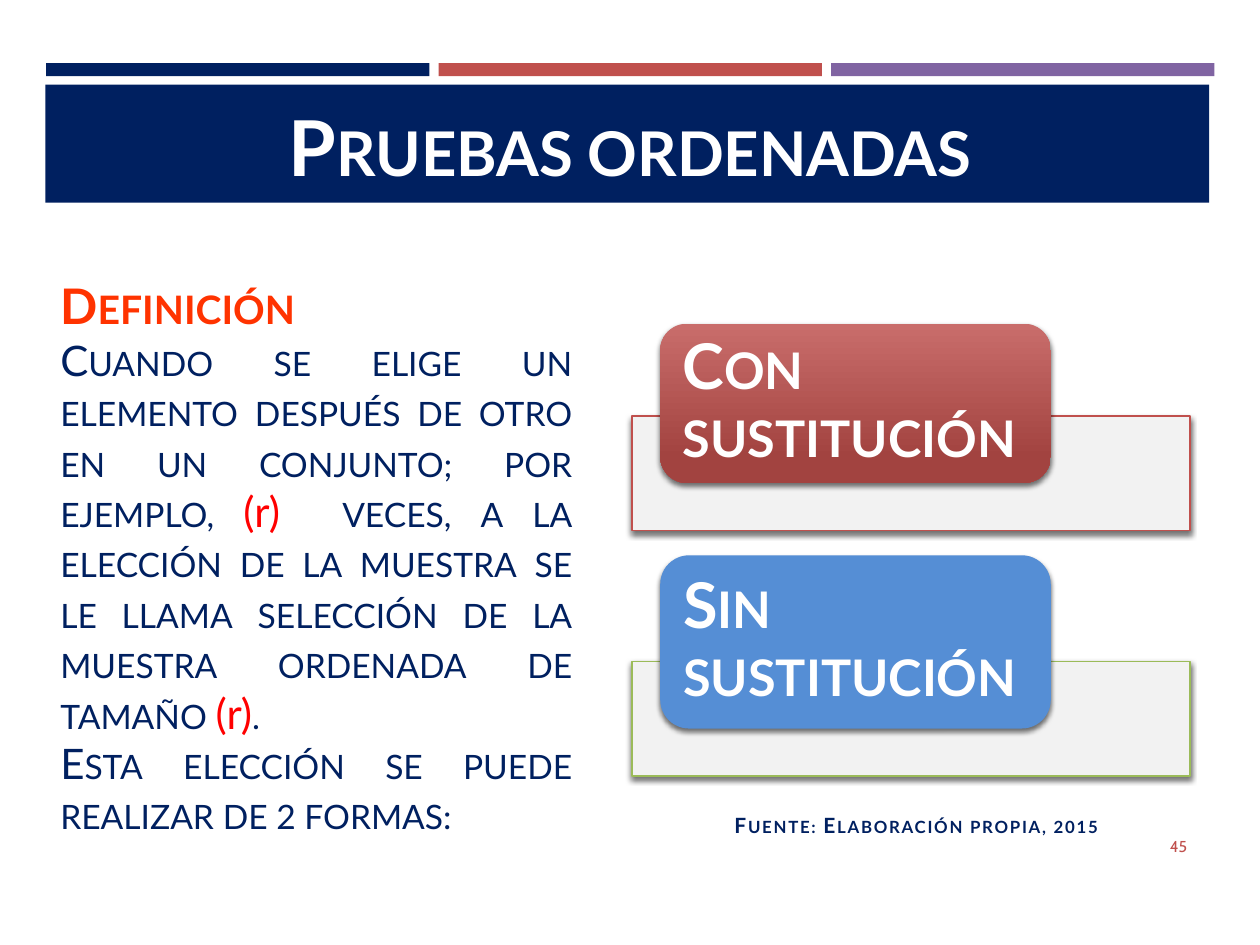
from lxml import etree
from pptx import Presentation
from pptx import util as u
from pptx.dml.color import RGBColor
from pptx.enum import shapes, text
from pptx.oxml import ns

COLORS = {
    "navy": "002060", "red": "C0504D", "purple": "8064A2", "green": "9BBB59",
    "white": "FFFFFF", "orange": "FF3300", "accent": "FF0000", "panel": "F2F2F2",
    "red_top": "C96D6B", "red_low": "A24340", "blue": "558ED5", "black": "000000",
}


def rgb(name):
    return RGBColor.from_string(COLORS[name])


class Builder:
    font = "Lato"

    def __init__(self, prs):
        self.s = prs.slides.add_slide(prs.slide_layouts[5])

    def style(self, r, size, color, bold=False, small=True, font=None):
        r.font.name = font or self.font
        r.font.size = u.Pt(size)
        r.font.bold = bold
        r.font.color.rgb = rgb(color)
        if small:
            r._r.get_or_add_rPr().set("cap", "small")

    def frame(self, sp, anchor, side=7.2, edge=3.6):
        tf = sp.text_frame
        tf.word_wrap = True
        tf.auto_size = text.MSO_AUTO_SIZE.NONE
        tf.vertical_anchor = anchor
        tf.margin_left = tf.margin_right = u.Pt(side)
        tf.margin_top = tf.margin_bottom = u.Pt(edge)
        return tf

    def shadow(self, sp):
        effects = sp._element.spPr.find(ns.qn("a:effectLst"))
        shade = etree.SubElement(effects, ns.qn("a:outerShdw"), blurRad=str(u.Pt(3)),
                                 dist=str(u.Pt(2)), dir="5400000", rotWithShape="0")
        clr = etree.SubElement(shade, ns.qn("a:srgbClr"), val=COLORS["black"])
        etree.SubElement(clr, ns.qn("a:alpha"), val="55000")

    def box(self, x, y, w, h, fill, line=None, rounded=False, shadow=False):
        kind = shapes.MSO_SHAPE.ROUNDED_RECTANGLE if rounded else shapes.MSO_SHAPE.RECTANGLE
        sp = self.s.shapes.add_shape(kind, u.Pt(x), u.Pt(y), u.Pt(w), u.Pt(h))
        sp.shadow.inherit = False
        if isinstance(fill, tuple):
            sp.fill.gradient()
            sp.fill.gradient_angle = 270
            for stop, color, pos in zip(sp.fill.gradient_stops, fill, (0, 0.84)):
                stop.color.rgb = rgb(color)
                stop.position = pos
        else:
            sp.fill.solid()
            sp.fill.fore_color.rgb = rgb(fill)
        if line:
            sp.line.color.rgb = rgb(line)
            sp.line.width = u.Pt(1)
        else:
            sp.line.fill.background()
        if shadow:
            self.shadow(sp)
        return sp

    def title(self, x, y, w, h, words):
        sp = self.s.shapes.title
        self.s.shapes._spTree.append(sp._element)
        sp.left, sp.top, sp.width, sp.height = (u.Pt(v) for v in (x, y, w, h))
        tf = self.frame(sp, text.MSO_ANCHOR.BOTTOM)
        tf.text = words
        p = tf.paragraphs[0]
        p.alignment = text.PP_ALIGN.CENTER
        self.style(p.runs[0], 44, "white", bold=True)

    def text(self, x, y, w, h, paragraphs, align):
        sp = self.s.shapes.add_textbox(u.Pt(x), u.Pt(y), u.Pt(w), u.Pt(h))
        tf = self.frame(sp, text.MSO_ANCHOR.MIDDLE)
        for i, runs in enumerate(paragraphs):
            p = tf.add_paragraph() if i else tf.paragraphs[0]
            p.alignment = align
            for words, look in runs:
                r = p.add_run()
                r.text = words
                self.style(r, **look)
        return sp

    def option(self, words, panel_y, line, y, h, fill):
        self.box(361, panel_y, 319, 65.5, "panel", line=line, shadow=True)
        sp = self.box(377.3, y, 223.2, h, fill, rounded=True, shadow=True)
        tf = self.frame(sp, text.MSO_ANCHOR.MIDDLE, side=8.4, edge=0)
        tf.text = words
        p = tf.paragraphs[0]
        p.alignment = text.PP_ALIGN.LEFT
        p.line_spacing = 0.9
        self.style(p.runs[0], 36, "white", bold=True)


def main():
    prs = Presentation()
    prs.slide_width, prs.slide_height = u.Pt(720), u.Pt(540)
    b = Builder(prs)

    for i, color in enumerate(("navy", "red", "purple")):
        b.box(26.4 + 224.3 * i, 36, 219, 7.5, color)
    b.box(26, 48.4, 665, 67.5, "navy")
    b.title(32.4, 50.4, 655.2, 62.6, "Pruebas ordenadas")

    heading = dict(size=28, color="orange", bold=True)
    body = dict(size=24, color="navy")
    symbol = dict(size=24, color="accent", small=False)
    b.text(27.4, 127.4, 306.7, 381.6, [
        [("Definición", heading)],
        [("Cuando se elige un elemento después de otro en un conjunto; por ejemplo, ", body),
         ("(r)  ", symbol),
         ("veces, a la elección de la muestra se le llama selección de la muestra "
          "ordenada de tamaño ", body),
         ("(r)", symbol), (". ", body)],
        [("Esta elección se puede realizar de 2 formas:", body)],
    ], text.PP_ALIGN.JUSTIFY)

    b.option("Con sustitución", 237.7, "red", 185, 91, ("red_top", "red_low"))
    b.option("Sin sustitución", 378, "green", 317.3, 99, "blue")

    source = b.text(412.6, 460.8, 237.6, 21.6,
                    [[("Fuente: Elaboración propia, 2015",
                       dict(size=12, color="navy", bold=True))]], text.PP_ALIGN.CENTER)
    source.text_frame.paragraphs[0].runs[0]._r.get_or_add_rPr().set("spc", "100")
    b.text(623.5, 469, 62, 28.8,
           [[("45", dict(size=9, color="red", small=False, font="Cabin"))]],
           text.PP_ALIGN.RIGHT)

    prs.save("out.pptx")


if __name__ == "__main__":
    main()
